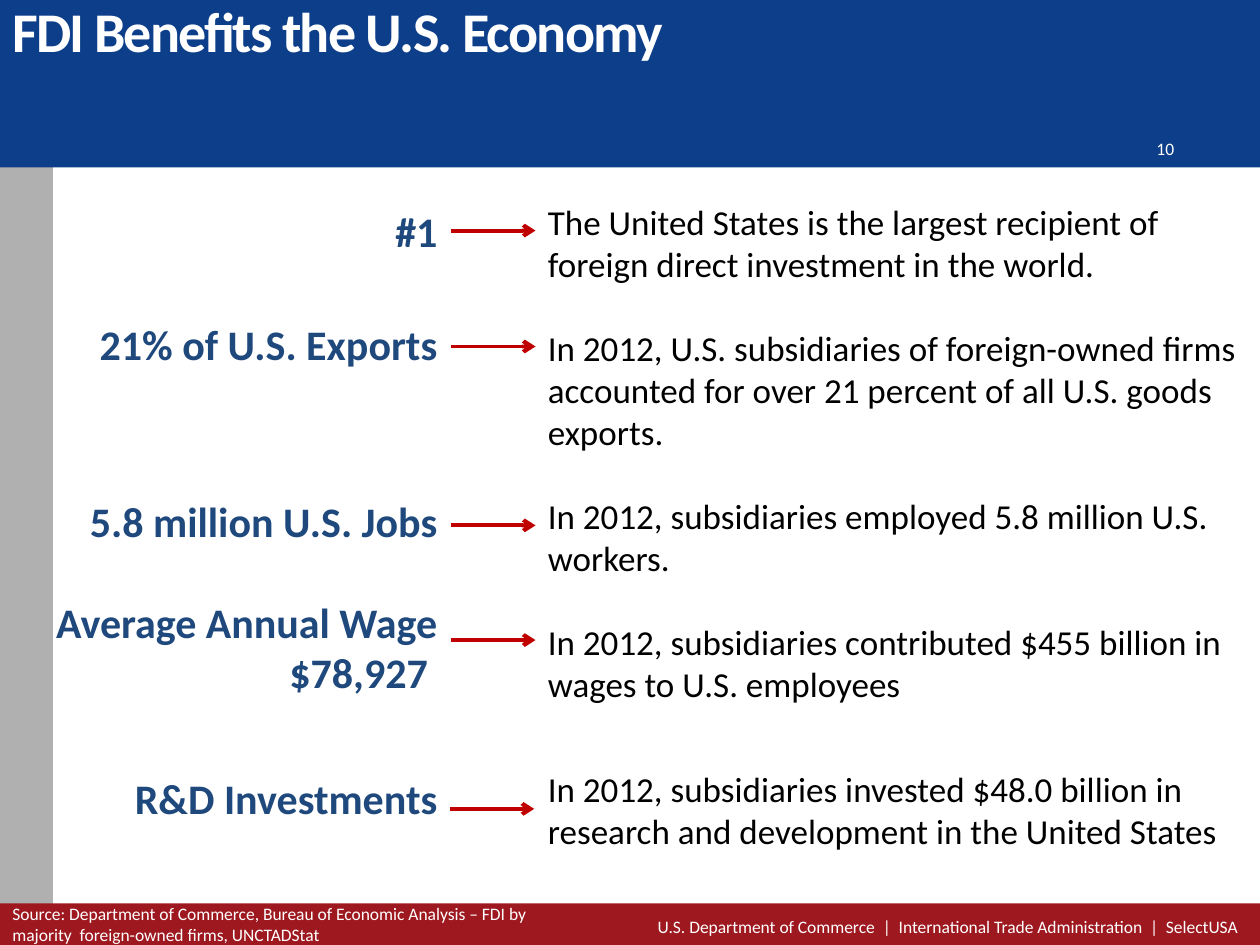
from lxml.etree import SubElement
from pptx import Presentation
from pptx.dml.color import RGBColor
from pptx.enum.shapes import MSO_CONNECTOR as CONN, MSO_SHAPE as SHAPE
from pptx.enum.text import MSO_ANCHOR as ANCHOR, PP_ALIGN as ALIGN
from pptx.oxml.ns import qn
from pptx.util import Inches, Pt

GRAY = RGBColor(0xB1, 0xB0, 0xB1)
BLUE = RGBColor(0x0D, 0x3E, 0x89)
MAROON = RGBColor(0x9D, 0x19, 0x1F)
NAVY = RGBColor(0x1F, 0x49, 0x7D)
RED = RGBColor(0xC0, 0x00, 0x00)
BLACK = RGBColor(0, 0, 0)
WHITE = RGBColor(0xFF, 0xFF, 0xFF)

TITLE = "FDI Benefits the U.S. Economy"
FOOTER = "U.S. Department of Commerce  |  International Trade Administration  |  SelectUSA"
SOURCE = [
    ("Source: Department of Commerce, Bureau of Economic Analysis – FDI by", 0),
    ("majority  foreign-owned firms, UNCTADStat", 0),
]
HEADLINES = [
    ("#1", 0),
    ("21% of U.S. Exports", 36),
    ("5.8 million U.S. Jobs", 72),
    ("Average Annual Wage", 29),
    ("$78,927 ", 0),
    ("R&D Investments", 43),
]
DETAILS = [
    ("The United States is the largest recipient of foreign direct investment in the world.", 0),
    ("In 2012, U.S. subsidiaries of foreign-owned firms accounted for over 21 percent "
     "of all U.S. goods exports.", 24),
    ("In 2012, subsidiaries employed 5.8 million U.S. workers.", 24),
    ("In 2012, subsidiaries contributed $455 billion in wages to U.S. employees", 24),
    ("In 2012, subsidiaries invested $48.0 billion in research and development "
     "in the United States", 36),
]
BANDS = [
    (0, 0, 0.42, 7.5, GRAY),
    (0, 0, 10, 1.33, BLUE),
    (0, 7.17, 10, 0.34, MAROON),
]
ARROWS = [(3.58, 1.83), (3.58, 2.75), (3.58, 4.17), (3.58, 5.08), (3.57, 6.42)]
ARROW_LENGTH = 0.67

prs = Presentation()
prs.slide_width, prs.slide_height = Inches(10), Inches(7.5)
s = prs.slides.add_slide(prs.slide_layouts[6])


def add_text(paragraphs, x, y, w, h, size=10, color=WHITE, bold=False,
             align=ALIGN.LEFT, anchor=ANCHOR.TOP, tracking=0):
    if isinstance(paragraphs, str):
        paragraphs = [(paragraphs, 0)]
    tf = s.shapes.add_textbox(Inches(x), Inches(y), Inches(w), Inches(h)).text_frame
    tf.word_wrap = True
    tf.vertical_anchor = anchor
    for i, (text, gap) in enumerate(paragraphs):
        p = tf.paragraphs[0] if i == 0 else tf.add_paragraph()
        p.alignment = align
        if gap:
            p.space_before = Pt(gap)
        r = p.add_run()
        r.text = text
        r.font.name, r.font.size, r.font.bold = "Calibri", Pt(size), bold
        r.font.color.rgb = color
        if tracking:
            r._r.get_or_add_rPr().set("spc", str(tracking * 100))


def add_band(x, y, w, h, color):
    sp = s.shapes.add_shape(SHAPE.RECTANGLE, Inches(x), Inches(y), Inches(w), Inches(h))
    sp.shadow.inherit = False
    sp.fill.solid()
    sp.fill.fore_color.rgb = color
    sp.line.fill.background()


def add_arrow(x, y):
    c = s.shapes.add_connector(CONN.STRAIGHT, Inches(x), Inches(y),
                               Inches(x + ARROW_LENGTH), Inches(y))
    c.line.color.rgb = RED
    c.line.width = Pt(2.25)
    SubElement(c.line._get_or_add_ln(), qn("a:tailEnd"), type="arrow")
    SubElement(c._element.spPr, qn("a:effectLst"))


for band in BANDS:
    add_band(*band)
add_text(FOOTER, 0, 7.17, 9.92, 0.36, align=ALIGN.RIGHT, anchor=ANCHOR.MIDDLE)
add_text(TITLE, 0, -0.08, 9, 0.67, size=32, bold=True, tracking=-1)
add_text(HEADLINES, 0.15, 1.58, 3.42, 5.52, size=24, color=NAVY, bold=True, align=ALIGN.RIGHT)
add_text(DETAILS, 4.25, 1.54, 5.75, 5.72, size=20, color=BLACK)
for x, y in ARROWS:
    add_arrow(x, y)
add_text(SOURCE, 0, 7.12, 9.58, 0.44)
add_text("10", 9.08, 1, 1.17, 0.36, anchor=ANCHOR.MIDDLE)

prs.save("out.pptx")
